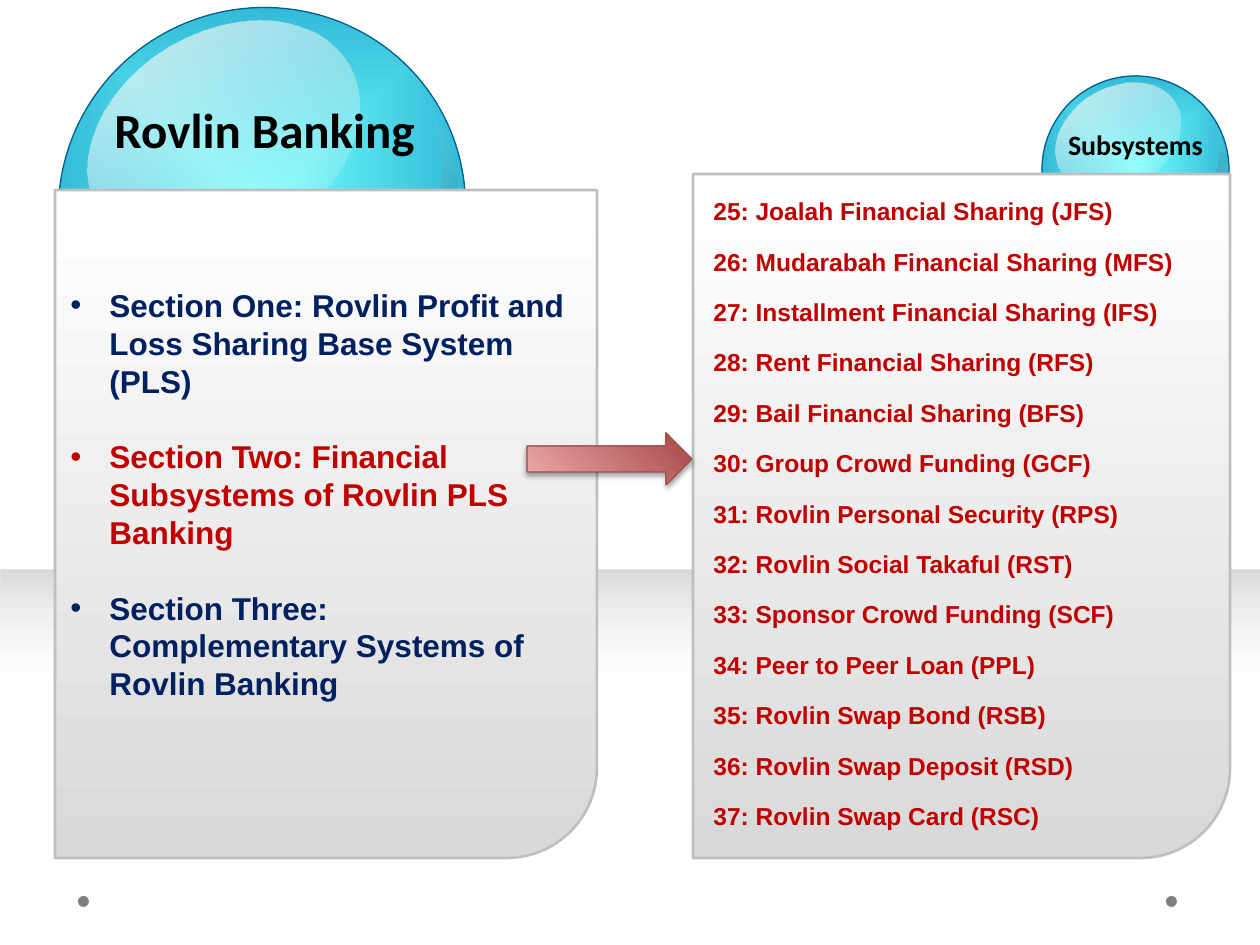
"""Build the slide linking the Rovlin Banking sections to their subsystems."""
from pptx import Presentation
from pptx.dml.color import RGBColor
from pptx.enum.shapes import MSO_SHAPE
from pptx.enum.text import MSO_AUTO_SIZE, PP_ALIGN
from pptx.oxml import parse_xml
from pptx.oxml.ns import nsdecls
from pptx.util import Emu, Pt

PX = 914400 / 126
UPWARD = '<a:lin ang="16200000" scaled="0"/>'
DOWNWARD = '<a:lin ang="5400000" scaled="0"/>'
FROM_CENTRE = '<a:path path="shape"><a:fillToRect l="50000" t="50000" r="50000" b="50000"/></a:path>'
FROM_CORNER = '<a:path path="circle"><a:fillToRect l="100000" b="100000"/></a:path>'


def add_gradient_shape(kind, box, stops, direction, line=None, width=0.75, rotation=0, flip=False):
    """Add a preset shape filled with (position, colour, opacity) stops."""
    shape = slide.shapes.add_shape(kind, *[Emu(round(value * PX)) for value in box])
    shape.shadow.inherit = False
    shape.rotation = rotation
    if flip:
        shape._element.spPr.xfrm.set("flipH", "1")
    stop_list = "".join(
        f'<a:gs pos="{position * 1000}"><a:srgbClr val="{colour}">'
        f'<a:alpha val="{opacity * 1000}"/></a:srgbClr></a:gs>'
        for position, colour, opacity in stops)
    shape.fill.background()
    properties = shape._element.spPr
    properties.replace(properties.find("{*}noFill"), parse_xml(
        f'<a:gradFill {nsdecls("a")} rotWithShape="1"><a:gsLst>{stop_list}</a:gsLst>'
        f'{direction}</a:gradFill>'))
    if line:
        shape.line.color.rgb = RGBColor.from_string(line)
        shape.line.width = Pt(width)
    else:
        shape.line.fill.background()
    return shape


def add_text(box, lines, size, font, gap=0, align=PP_ALIGN.LEFT, bullet=False):
    """Add a bold text box of (text, colour) paragraphs."""
    text_box = slide.shapes.add_textbox(*[Emu(round(value * PX)) for value in box])
    text_frame = text_box.text_frame
    text_frame.word_wrap = True
    text_frame.auto_size = MSO_AUTO_SIZE.SHAPE_TO_FIT_TEXT
    text_frame.text = "\n".join(text for text, colour in lines)
    for index, (paragraph, (text, colour)) in enumerate(zip(text_frame.paragraphs, lines)):
        paragraph.alignment = align
        if index and gap:
            paragraph.space_before = Pt(gap)
        if bullet:
            properties = paragraph._p.get_or_add_pPr()
            indent = round(39 * PX)
            properties.set("marL", str(indent))
            properties.set("indent", str(-indent))
            properties.append(parse_xml(f'<a:buFont {nsdecls("a")} typeface="Arial"/>'))
            properties.append(parse_xml(f'<a:buChar {nsdecls("a")} char="•"/>'))
        run_font = paragraph.runs[0].font
        run_font.name = font
        run_font.size = Pt(size)
        run_font.bold = True
        run_font.color.rgb = RGBColor.from_string(colour)


presentation = Presentation()
presentation.slide_width = Emu(round(1260 * PX))
presentation.slide_height = Emu(round(945 * PX))
slide = presentation.slides.add_slide(presentation.slide_layouts[6])

for left in (1166, 78):
    dot = slide.shapes.add_shape(
        MSO_SHAPE.OVAL, *[Emu(round(value * PX)) for value in (left, 896, 11, 11)])
    dot.shadow.inherit = False
    dot.fill.solid()
    dot.fill.fore_color.rgb = RGBColor.from_string("808080")
    dot.line.fill.background()

add_gradient_shape(MSO_SHAPE.RECTANGLE, (1, 570, 1260, 327),
                   [(0, "FFFFFF", 0), (61, "FFFFFF", 0), (100, "D9D9D9", 100)], UPWARD)

for left, top, width, height in ((58, 8, 408, 401), (1042, 76, 187, 187)):
    add_gradient_shape(MSO_SHAPE.OVAL, (left, top, width, height),
                       [(0, "74FFFD", 100), (100, "20A6CD", 100)], FROM_CENTRE,
                       line="00618E", rotation=338.6, flip=True)
    moon = add_gradient_shape(
        MSO_SHAPE.MOON,
        (left + 0.43 * width, top + 0.22 * height, 0.43 * width, 0.98 * height),
        [(24, "000000", 24), (100, "FFFFFF", 0)], FROM_CENTRE, rotation=53.6, flip=True)
    moon.adjustments[0] = 0.19
    add_gradient_shape(
        MSO_SHAPE.OVAL,
        (left + 0.05 * width, top + 0.06 * height, 0.71 * width, 0.53 * height),
        [(0, "FFFCF9", 77), (100, "FFFFFF", 0)], DOWNWARD, rotation=329.4, flip=True)

for panel_box in ((693, 174, 537, 684), (55, 190, 542, 668)):
    add_gradient_shape(MSO_SHAPE.ROUND_1_RECTANGLE, panel_box,
                       [(0, "FFFFFF", 100), (100, "D9D9D9", 100)], UPWARD,
                       line="BFBFBF", width=1.5, rotation=180, flip=True)

subsystems = [
    "Joalah Financial Sharing (JFS)",
    "Mudarabah Financial Sharing (MFS)",
    "Installment Financial Sharing (IFS)",
    "Rent Financial Sharing (RFS)",
    "Bail Financial Sharing (BFS)",
    "Group Crowd Funding (GCF)",
    "Rovlin Personal Security (RPS)",
    "Rovlin Social Takaful (RST)",
    "Sponsor Crowd Funding (SCF)",
    "Peer to Peer Loan (PPL)",
    "Rovlin Swap Bond (RSB)",
    "Rovlin Swap Deposit (RSD)",
    "Rovlin Swap Card (RSC)",
]
add_text((701, 190, 524, 653),
         [(f"{number}: {name}", "C00000") for number, name in enumerate(subsystems, 25)],
         14, "Arial", gap=12)
add_text((1046, 121, 179, 47), [("Subsystems", "000000")], 16, "Calibri",
         align=PP_ALIGN.CENTER)

sections = [
    ("Section One: Rovlin Profit and Loss Sharing Base System (PLS)", "002060"),
    ("Section Two: Financial Subsystems of Rovlin PLS Banking", "C00000"),
    ("Section Three: Complementary Systems of Rovlin Banking", "002060"),
]
add_text((58, 280, 522, 432), sections, 18, "Arial", gap=21.6, bullet=True)
add_text((99, 93, 331, 72), [("Rovlin Banking", "000000")], 28, "Calibri",
         align=PP_ALIGN.CENTER)

arrow = add_gradient_shape(MSO_SHAPE.RIGHT_ARROW, (527, 433, 165, 52),
                           [(0, "A74747", 100), (100, "ECABAB", 100)], FROM_CORNER,
                           line="9A4E4E")
arrow_properties = arrow._element.spPr
arrow_properties.replace(arrow_properties.find("{*}effectLst"), parse_xml(
    f'<a:effectLst {nsdecls("a")}><a:outerShdw blurRad="{Pt(3.1)}" dist="{Pt(1.8)}" '
    'dir="5400000" rotWithShape="0"><a:srgbClr val="000000"><a:alpha val="35000"/>'
    '</a:srgbClr></a:outerShdw></a:effectLst>'))

presentation.save("out.pptx")
